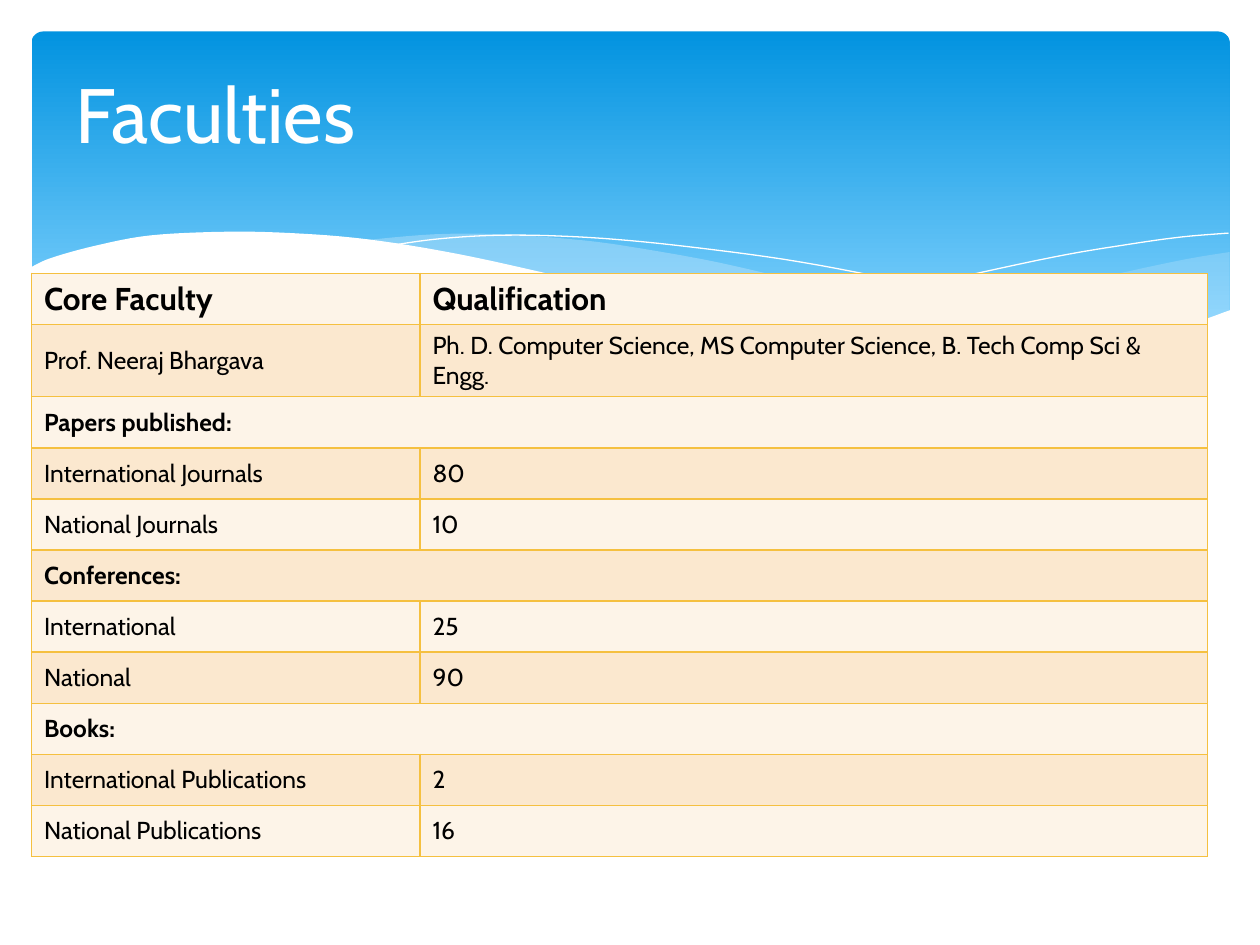
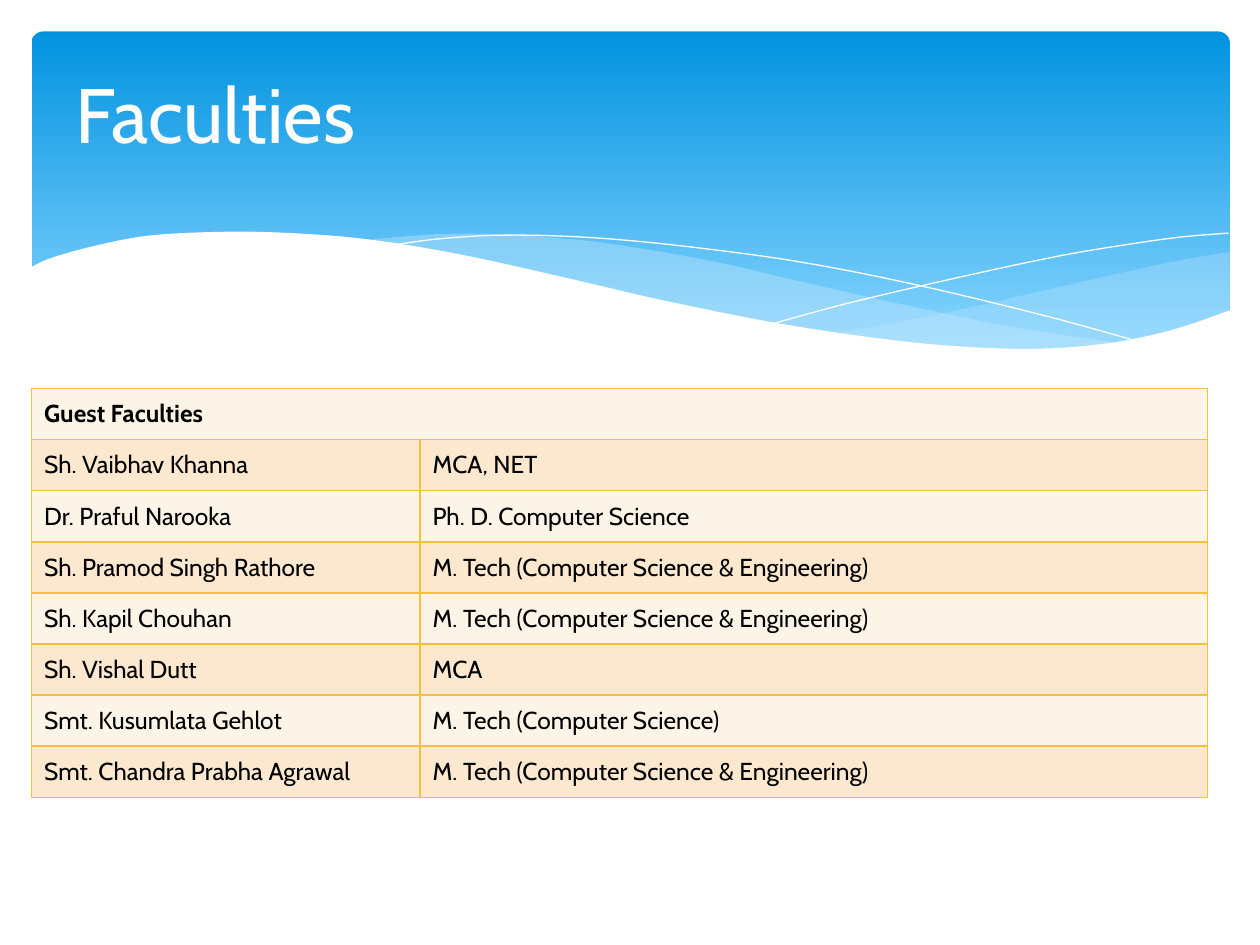
from lxml import etree
from pptx import Presentation
from pptx.dml.color import RGBColor
from pptx.enum.text import MSO_ANCHOR, PP_ALIGN
from pptx.enum.shapes import MSO_SHAPE
from pptx.oxml import parse_xml
from pptx.oxml.ns import nsdecls, qn
from pptx.util import Pt

CS_ENGINEERING = "M. Tech (Computer Science & Engineering)"

# A row with one entry is a section heading across both columns.
SLIDES = [
    {
        "title": "Faculties",
        "table_top": 156.2,
        "header": ("Core Faculty", "Qualification"),
        "rows": [
            ("Prof. Neeraj Bhargava",
             "Ph. D. Computer Science, MS Computer Science, B. Tech Comp Sci & Engg."),
            ("Papers published:",),
            ("International Journals", "80"),
            ("National Journals", "10"),
            ("Conferences:",),
            ("International", "25"),
            ("National", "90"),
            ("Books:",),
            ("International Publications", "2"),
            ("National Publications", "16"),
        ],
    },
    {
        "title": "Faculties",
        "table_top": 222,
        "header": None,
        "rows": [
            ("Guest Faculties",),
            ("Sh. Vaibhav Khanna", "MCA, NET"),
            ("Dr. Praful Narooka", "Ph. D. Computer Science"),
            ("Sh. Pramod Singh Rathore", CS_ENGINEERING),
            ("Sh. Kapil Chouhan", CS_ENGINEERING),
            ("Sh. Vishal Dutt", "MCA"),
            ("Smt. Kusumlata Gehlot", "M. Tech (Computer Science)"),
            ("Smt. Chandra Prabha Agrawal", CS_ENGINEERING),
        ],
    },
]

FONT = "Cabin"
WHITE, BLACK = "FFFFFF", "000000"
BAND_TOP, BAND_BOTTOM, SWELL = "0293E0", "83D3FE", "C6E7FC"
BORDER = "F5C040"
ROW_FILLS = ("FDF4E8", "FBE8CF")

TABLE_LEFT, COLUMN_WIDTHS, ROW_HEIGHT = 18, (222, 450), 29.2

# Knots of the smooth curves in the header band, in points.
RIGHT_SWELL = [
    [(702.7, 144), (673.2, 149), (620, 160.6), (561, 174.2), (508.3, 185), (476, 190.8)],
    [(476, 190.8), (507.6, 195.1), (536.4, 198), (578.2, 200.2), (615, 198.7),
     (651.6, 193.7), (678.2, 186.5), (702.7, 177.8)],
]
LEFT_SWELL = [
    [(643, 196.6), (581, 187.2), (533.5, 177.8), (481, 166.3), (453, 159.8), (409.7, 149.8),
     (370, 142.6), (334.8, 137.5), (287.3, 133.9), (247.7, 133.9), (206, 137.5)],
    [(206, 137.5), (246.2, 143.3), (291, 151.9), (323.3, 159.8), (381.6, 172.8), (432.7, 183.6),
     (478.8, 191.5), (519.8, 197.3), (565.2, 200.2), (603.4, 200.2), (643, 196.6)],
]
FALLING_LINE = [
    (222.5, 140.4), (247.7, 136.8), (278.6, 134.6), (311.8, 134.6), (352, 136.8), (400.3, 141.8),
    (458, 149.8), (523.4, 162.7), (598.3, 180.7), (653, 195.8)]
RISING_LINE = [
    (441.4, 185), (483.8, 173.5), (538.6, 160.6), (602, 146.9), (644.4, 139.7), (675.4, 135.4),
    (702, 133.2)]
WHITE_WAVE = [
    [(703.4, 177.1), (669.6, 188.6), (630, 196.6), (582.5, 199.4), (522.7, 195.8), (450.7, 185.8),
     (381, 172.1), (321.8, 158.4), (262.8, 145.4), (210.2, 136.8), (165.6, 133.2), (127.4, 132.5),
     (85.7, 134.6), (54.7, 140.4), (28.8, 147.6), (16.6, 153.4)],
    [(16.6, 236.9), (703.4, 236.9)],
]


def rgb(color):
    return RGBColor.from_string(color)


def smooth(knots, steps=6):
    """Return points along a Catmull-Rom curve through the knots."""
    padded = [knots[0], *knots, knots[-1]]
    points = [knots[0]]
    for a, b, c, d in zip(padded, padded[1:], padded[2:], padded[3:]):
        for i in range(1, steps + 1):
            t = i / steps
            points.append(tuple(
                0.5 * (2 * q + (r - p) * t + (2 * p - 5 * q + 4 * r - s) * t ** 2
                       + (3 * q - p - 3 * r + s) * t ** 3)
                for p, q, r, s in zip(a, b, c, d)))
    return points


def add_outline(shapes, curves, closed):
    points = [(Pt(x), Pt(y)) for curve in curves for x, y in smooth(curve)]
    builder = shapes.build_freeform(*points[0])
    builder.add_line_segments(points[1:], close=closed)
    sp = builder.convert_to_shape()
    sp.shadow.inherit = False
    return sp


def add_area(shapes, curves, color, opacity=100):
    sp = add_outline(shapes, curves, True)
    sp.line.fill.background()
    sp.fill.solid()
    sp.fill.fore_color.rgb = rgb(color)
    if opacity < 100:
        clr = next(sp.element.spPr.iter(qn("a:srgbClr")))
        etree.SubElement(clr, qn("a:alpha")).set("val", str(opacity * 1000))


def add_hairline(shapes, curve):
    sp = add_outline(shapes, [curve], False)
    sp.fill.background()
    sp.line.color.rgb = rgb(WHITE)
    sp.line.width = Pt(0)


def add_band(shapes):
    sp = shapes.add_shape(MSO_SHAPE.ROUNDED_RECTANGLE, Pt(18), Pt(18), Pt(684.7), Pt(194.4))
    sp.adjustments[0] = 0.034
    sp.shadow.inherit = False
    sp.line.fill.background()
    sp.fill.gradient()
    sp.fill.gradient_angle = 270
    for stop, position, color in zip(sp.fill.gradient_stops, (0, 0.9), (BAND_TOP, BAND_BOTTOM)):
        stop.position = position
        stop.color.rgb = rgb(color)


def decorate_layout(layout, slide):
    """Draw the header band on the slide, then move it to the layout all slides share."""
    present = set(sp.shape_id for sp in slide.shapes)
    add_band(slide.shapes)
    add_area(slide.shapes, RIGHT_SWELL, SWELL, 29)
    add_area(slide.shapes, LEFT_SWELL, SWELL, 40)
    add_hairline(slide.shapes, FALLING_LINE)
    add_hairline(slide.shapes, RISING_LINE)
    add_area(slide.shapes, WHITE_WAVE, WHITE)
    for sp in list(slide.shapes):
        if sp.shape_id not in present:
            layout.shapes.element.append(sp.element)


def format_text(tf, size, color, bold=False):
    for p in tf.paragraphs:
        p.alignment = PP_ALIGN.LEFT
        for r in p.runs:
            r.font.name = FONT
            r.font.size = Pt(size)
            r.font.bold = bold
            r.font.color.rgb = rgb(color)


def set_title(slide, text):
    title = slide.shapes.title
    title.left, title.top, title.width, title.height = Pt(36), Pt(26.6), Pt(648), Pt(75.6)
    title.text_frame.text = text
    title.text_frame.vertical_anchor = MSO_ANCHOR.MIDDLE
    format_text(title.text_frame, 44, WHITE)


def format_cell(cell, fill):
    cell.fill.solid()
    cell.fill.fore_color.rgb = rgb(fill)
    tc_pr = cell._tc.get_or_add_tcPr()
    for i, side in enumerate(("lnL", "lnR", "lnT", "lnB")):
        tc_pr.insert(i, parse_xml(
            f'<a:{side} {nsdecls("a")} w="12700"><a:solidFill>'
            f'<a:srgbClr val="{BORDER}"/></a:solidFill></a:{side}>'))


def add_faculty_table(slide, top, header, rows):
    all_rows = [header, *rows] if header else rows
    frame = slide.shapes.add_table(
        len(all_rows), len(COLUMN_WIDTHS), Pt(TABLE_LEFT), Pt(top),
        Pt(sum(COLUMN_WIDTHS)), Pt(ROW_HEIGHT * len(all_rows)))
    table = frame.table
    table.first_row = table.horz_banding = False
    for column, width in zip(table.columns, COLUMN_WIDTHS):
        column.width = Pt(width)
    for i, texts in enumerate(all_rows):
        table.rows[i].height = Pt(ROW_HEIGHT)
        cells = list(table.rows[i].cells)
        is_header, is_section = texts is header, len(texts) == 1
        for cell in cells:
            format_cell(cell, ROW_FILLS[i % 2])
        if is_section:
            cells[0].merge(cells[1])
        for cell, text in zip(cells, texts):
            cell.text_frame.text = text
            cell.vertical_anchor = MSO_ANCHOR.TOP if is_header else MSO_ANCHOR.MIDDLE
            format_text(cell.text_frame, 18 if is_header else 14, BLACK, is_header or is_section)


def main():
    prs = Presentation()
    prs.slide_width, prs.slide_height = Pt(720), Pt(540)
    layout = prs.slide_layouts.get_by_name("Title Only")
    for i, content in enumerate(SLIDES):
        slide = prs.slides.add_slide(layout)
        if i == 0:
            decorate_layout(layout, slide)
        set_title(slide, content["title"])
        add_faculty_table(slide, content["table_top"], content["header"], content["rows"])
    prs.save("out.pptx")


if __name__ == "__main__":
    main()
